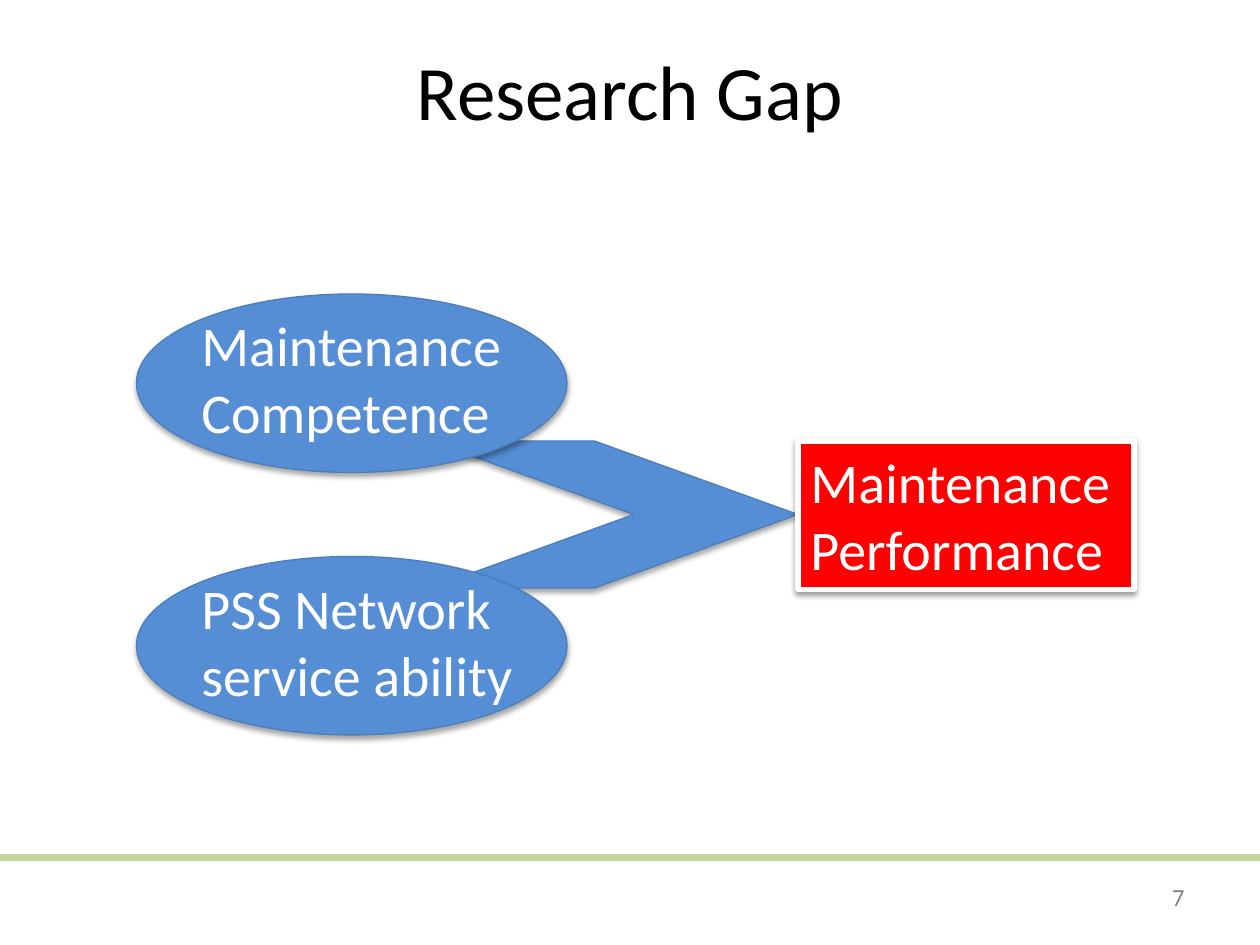
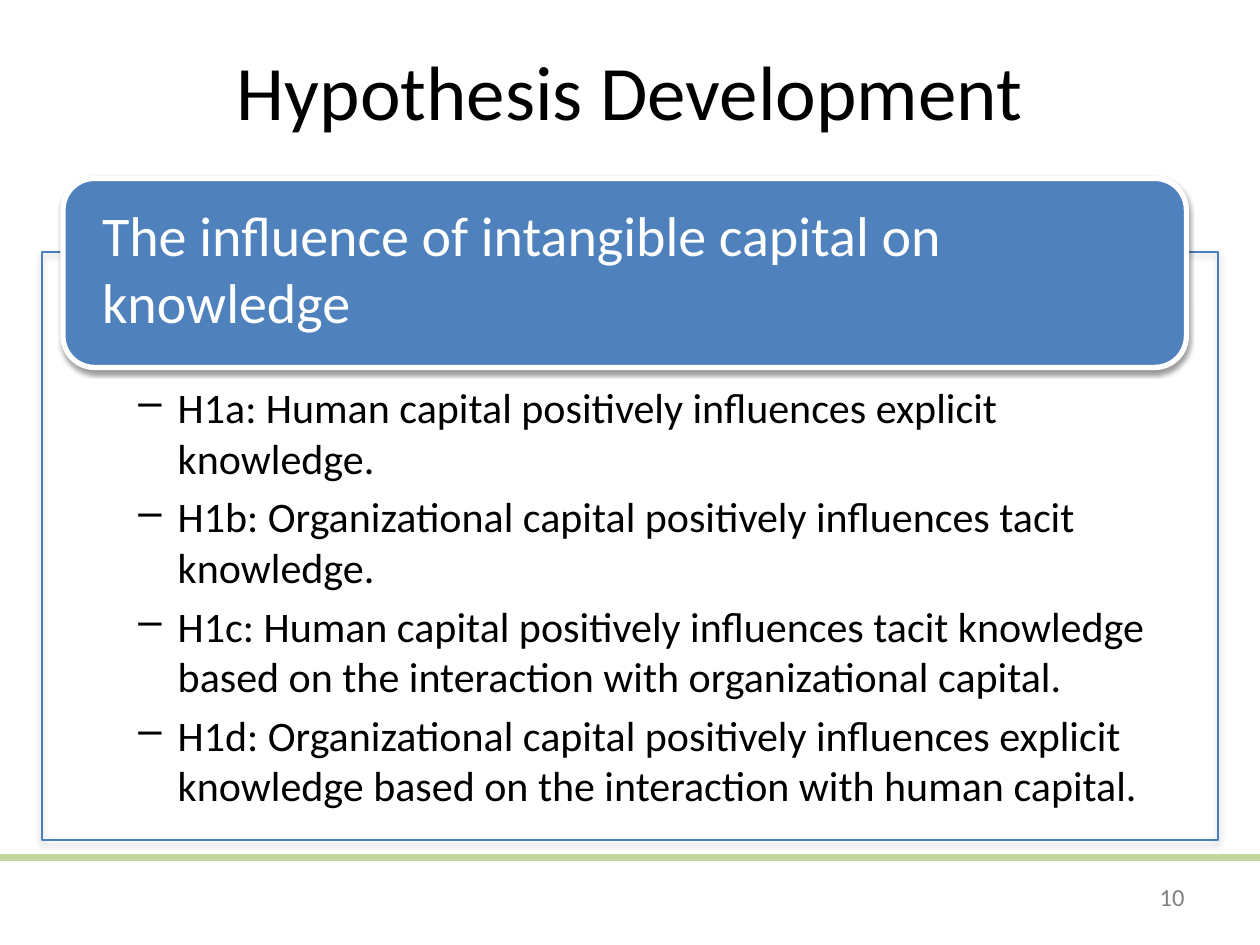
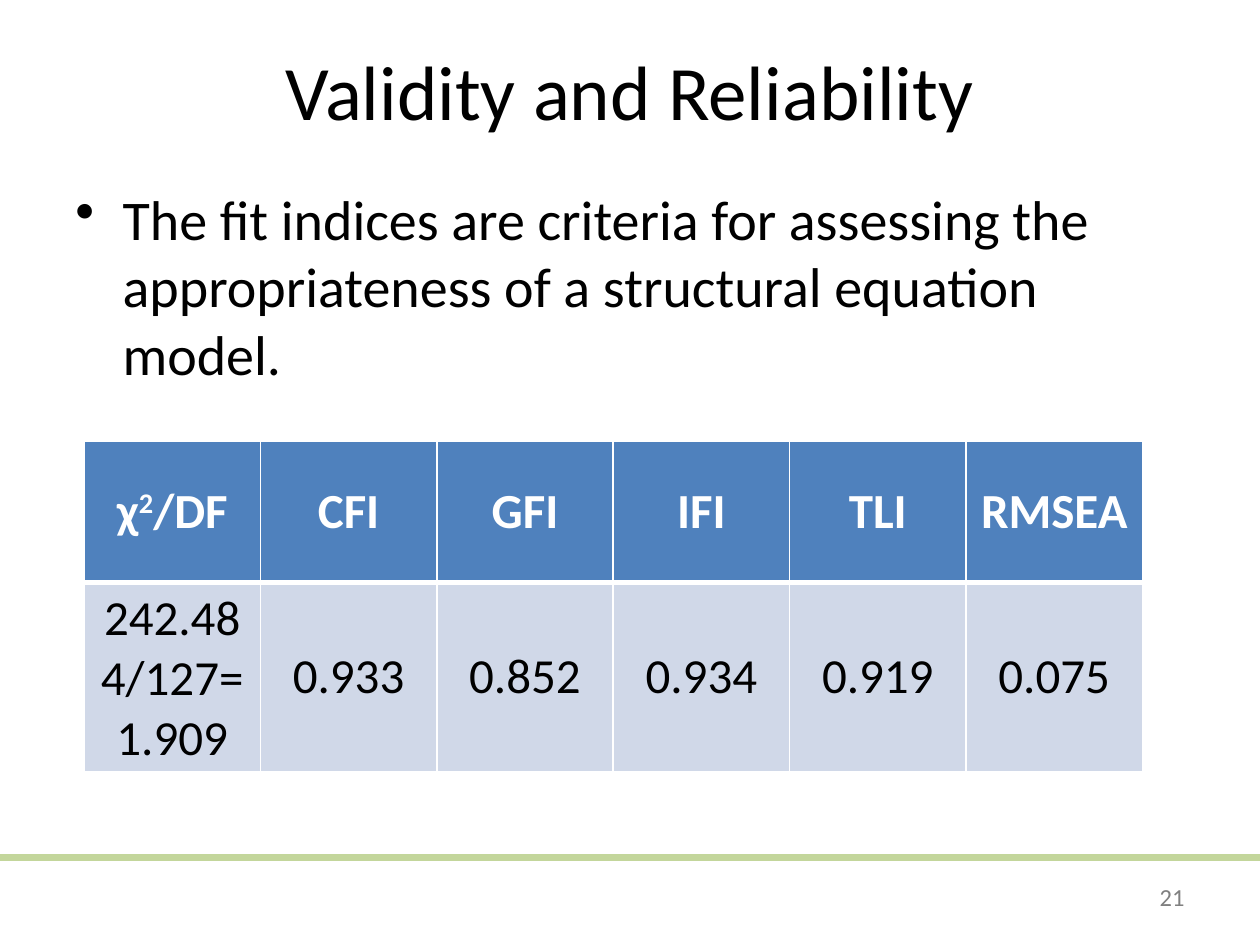
from dataclasses import dataclass, field
from typing import Any, Optional

import pptx
import pptx.dml.color
import pptx.enum.shapes
import pptx.enum.text
import pptx.oxml
import pptx.oxml.ns
import pptx.util
from lxml import etree

Pt = pptx.util.Pt
qn = pptx.oxml.ns.qn
Kind = pptx.enum.shapes.MSO_SHAPE
Align = pptx.enum.text.PP_ALIGN
Anchor = pptx.enum.text.MSO_ANCHOR

COLOURS = {
    "black": "000000",
    "white": "FFFFFF",
    "grey": "808080",
    "green": "C3D69B",
    "sky": "558ED5",
    "blue": "4F81BD",
    "outline": "4B7EBC",
    "red": "FF0000",
    "pale": "D0D8E8",
}
TITLE = {"size": Pt(44)}
LARGE = {"size": Pt(32)}
TABLE_HEAD = {"size": Pt(28), "bold": True}
TABLE_BODY = {"size": Pt(28), "bold": False}
ITEM = {"size": Pt(24)}
NUMBER = {"size": Pt(14)}


@dataclass(frozen=True)
class Area:
    left: float
    top: float
    width: float
    height: float

    def lengths(self) -> list[int]:
        return [Pt(v) for v in (self.left, self.top, self.width, self.height)]


@dataclass(frozen=True)
class Shadow:
    opacity: int
    blur: float
    distance: float


@dataclass(frozen=True)
class Bullet:
    sign: str
    left: float
    hanging: float
    before: float


@dataclass(frozen=True)
class Text:
    lines: tuple[str, ...]
    font: dict[str, Any]
    colour: str = "black"
    align: Any = Align.LEFT
    bullet: Optional[Bullet] = None
    frame: dict[str, Any] = field(default_factory=dict)


@dataclass(frozen=True)
class Block:
    kind: Any
    area: Area
    fill: Optional[str] = None
    line: Optional[str] = None
    weight: float = 0.75
    shadow: Optional[Shadow] = None
    adjust: Optional[float] = None


SOFT = Shadow(35, 3.1, 1.8)
STRONG = Shadow(38, 3.1, 1.6)
DASH = Bullet("–", 58.5, 22.5, 4.8)
DOT = Bullet("•", 27, 27, 6.4)


def apply(target: Any, values: dict[str, Any]) -> None:
    for name, value in values.items():
        setattr(target, name, value)


def rgb(name: str) -> pptx.dml.color.RGBColor:
    return pptx.dml.color.RGBColor.from_string(COLOURS[name])


def style_font(font: Any, values: dict[str, Any], colour: str) -> None:
    apply(font, {"name": "Calibri", **values})
    font.color.rgb = rgb(colour)


def add_bullet(para: Any, bullet: Bullet) -> None:
    properties = para._p.get_or_add_pPr()
    properties.set("marL", str(Pt(bullet.left)))
    properties.set("indent", str(-Pt(bullet.hanging)))
    etree.SubElement(properties, qn("a:buChar"), char=bullet.sign)


def fill_frame(frame: Any, text: Text) -> None:
    apply(frame, {"word_wrap": True, "vertical_anchor": Anchor.TOP, **text.frame})
    for index, line in enumerate(text.lines):
        para = frame.add_paragraph() if index else frame.paragraphs[0]
        para.alignment = text.align
        if text.bullet:
            add_bullet(para, text.bullet)
            if index:
                para.space_before = Pt(text.bullet.before)
        span = para.add_run()
        span.text = line
        style_font(span.font, text.font, text.colour)


def add_text(page: Any, area: Area, text: Text) -> None:
    fill_frame(page.shapes.add_textbox(*area.lengths()).text_frame, text)


def add_shadow(shape: Any, shadow: Shadow) -> None:
    effects = shape._element.spPr.find(qn("a:effectLst"))
    outer = etree.SubElement(
        effects, qn("a:outerShdw"), blurRad=str(Pt(shadow.blur)),
        dist=str(Pt(shadow.distance)), dir="5400000", rotWithShape="0")
    colour = etree.SubElement(outer, qn("a:srgbClr"), val=COLOURS["black"])
    etree.SubElement(colour, qn("a:alpha"), val=str(shadow.opacity * 1000))


def add_block(page: Any, block: Block, text: Optional[Text] = None) -> None:
    shape = page.shapes.add_shape(block.kind, *block.area.lengths())
    shape.shadow.inherit = False
    if block.adjust is not None:
        shape.adjustments[0] = block.adjust
    if block.fill:
        shape.fill.solid()
        shape.fill.fore_color.rgb = rgb(block.fill)
    else:
        shape.fill.background()
    if block.line:
        shape.line.color.rgb = rgb(block.line)
        shape.line.width = Pt(block.weight)
    else:
        shape.line.fill.background()
    if block.shadow:
        add_shadow(shape, block.shadow)
    if text:
        fill_frame(shape.text_frame, text)


def add_page(deck: Any, title: str, number: int) -> Any:
    """Blank slide with the green band, the title and the slide number."""
    page = deck.slides.add_slide(deck.slide_layouts[6])
    add_block(page, Block(Kind.RECTANGLE, Area(0, 488, 720, 4), "green"))
    add_text(page, Area(36, 21.6, 648, 74), Text((title,), TITLE, align=Align.CENTER))
    add_text(page, Area(516, 500.4, 168, 28.8),
             Text((str(number),), NUMBER, "grey", Align.RIGHT))
    return page


# Table
def set_border(cell: Any, side: str, weight: float) -> None:
    border = etree.SubElement(cell._tc.get_or_add_tcPr(), qn(f"a:{side}"), w=str(Pt(weight)))
    solid = etree.SubElement(border, qn("a:solidFill"))
    etree.SubElement(solid, qn("a:srgbClr"), val=COLOURS["white"])


def add_index_table(page: Any, rows: list[tuple[str, ...]]) -> Any:
    area = Area(48, 252, 604.8, 189)
    table = page.shapes.add_table(len(rows), len(rows[0]), *area.lengths()).table
    apply(table, {"first_row": False, "horz_banding": False})
    for column in table.columns:
        column.width = Pt(area.width / len(rows[0]))
    for row, height in zip(table.rows, (81, 108)):
        row.height = Pt(height)
    looks = [("blue", "white", TABLE_HEAD, 1, 3), ("pale", "black", TABLE_BODY, 3, 1)]
    for r, (fill, colour, font, above, below) in enumerate(looks):
        for c, value in enumerate(rows[r]):
            cell = table.cell(r, c)
            sides = {"lnL": 1, "lnR": 1, "lnT": above, "lnB": below}
            for side, weight in sides.items():
                set_border(cell, side, weight)
            cell.fill.solid()
            cell.fill.fore_color.rgb = rgb(fill)
            cell.vertical_anchor = Anchor.MIDDLE
            fill_frame(cell.text_frame, Text((value,), font, colour, Align.CENTER,
                                             frame={"vertical_anchor": None}))
            cell.vertical_anchor = Anchor.MIDDLE
    return table


def build_research_gap(deck: Any) -> None:
    page = add_page(deck, "Research Gap", 7)
    # Factors lead through the chevron to the outcome
    add_block(page, Block(Kind.CHEVRON, Area(246, 252, 210, 84), "sky", "outline",
                          shadow=SOFT, adjust=1.384))
    factors = [(168, 6, 222, "Maintenance Competence"),
               (318, 6, 210, "PSS Network service ability")]
    for top, drop, width, label in factors:
        add_block(page, Block(Kind.OVAL, Area(78, top, 246, 102), "sky", "outline", shadow=SOFT))
        add_text(page, Area(108, top + drop, width, 85), Text((label,), LARGE, "white"))
    add_block(page, Block(Kind.RECTANGLE, Area(456, 252, 192, 85), "red", "white", 3, STRONG),
              Text(("Maintenance Performance",), LARGE, "white"))


def build_hypotheses(deck: Any) -> None:
    page = add_page(deck, "Hypothesis Development", 10)
    add_text(page, Area(36, 214.6, 648, 289), Text((
        "H1a: Human capital positively influences explicit knowledge.",
        "H1b: Organizational capital positively influences tacit knowledge.",
        "H1c: Human capital positively influences tacit knowledge based on the "
        "interaction with organizational capital.",
        "H1d: Organizational capital positively influences explicit knowledge based on "
        "the interaction with human capital.",
    ), ITEM, bullet=DASH))
    # Frame and its heading
    add_block(page, Block(Kind.RECTANGLE, Area(24, 144, 672, 336), line="outline", shadow=SOFT))
    add_block(page, Block(Kind.ROUNDED_RECTANGLE, Area(36, 102, 642, 108), "blue", "white",
                          3, STRONG))
    insets = {"margin_left": Pt(18.7), "margin_right": Pt(18.7),
              "margin_top": 0, "margin_bottom": 0}
    add_text(page, Area(39.6, 96, 635, 114), Text(
        ("The influence of intangible capital on knowledge",), LARGE, "white",
        frame={"vertical_anchor": Anchor.MIDDLE, **insets}))


def build_validity(deck: Any) -> None:
    page = add_page(deck, "Validity and Reliability", 21)
    add_text(page, Area(36, 102, 648, 380), Text((
        "The fit indices are criteria for assessing the appropriateness of a structural "
        "equation model.",), LARGE, bullet=DOT))
    table = add_index_table(page, [
        ("χ", "CFI", "GFI", "IFI", "TLI", "RMSEA"),
        ("242.484/127=1.909", "0.933", "0.852", "0.934", "0.919", "0.075"),
    ])
    # Rest of the chi-square heading, with its raised exponent
    para = table.cell(0, 0).text_frame.paragraphs[0]
    for part, baseline in (("2", 30000), ("/DF", 0)):
        span = para.add_run()
        span.text = part
        style_font(span.font, TABLE_HEAD, "white")
        span._r.get_or_add_rPr().set("baseline", str(baseline))


def main() -> None:
    deck = pptx.Presentation()
    apply(deck, {"slide_width": Pt(720), "slide_height": Pt(540)})
    for build in (build_research_gap, build_hypotheses, build_validity):
        build(deck)
    deck.save("out.pptx")


if __name__ == "__main__":
    main()
